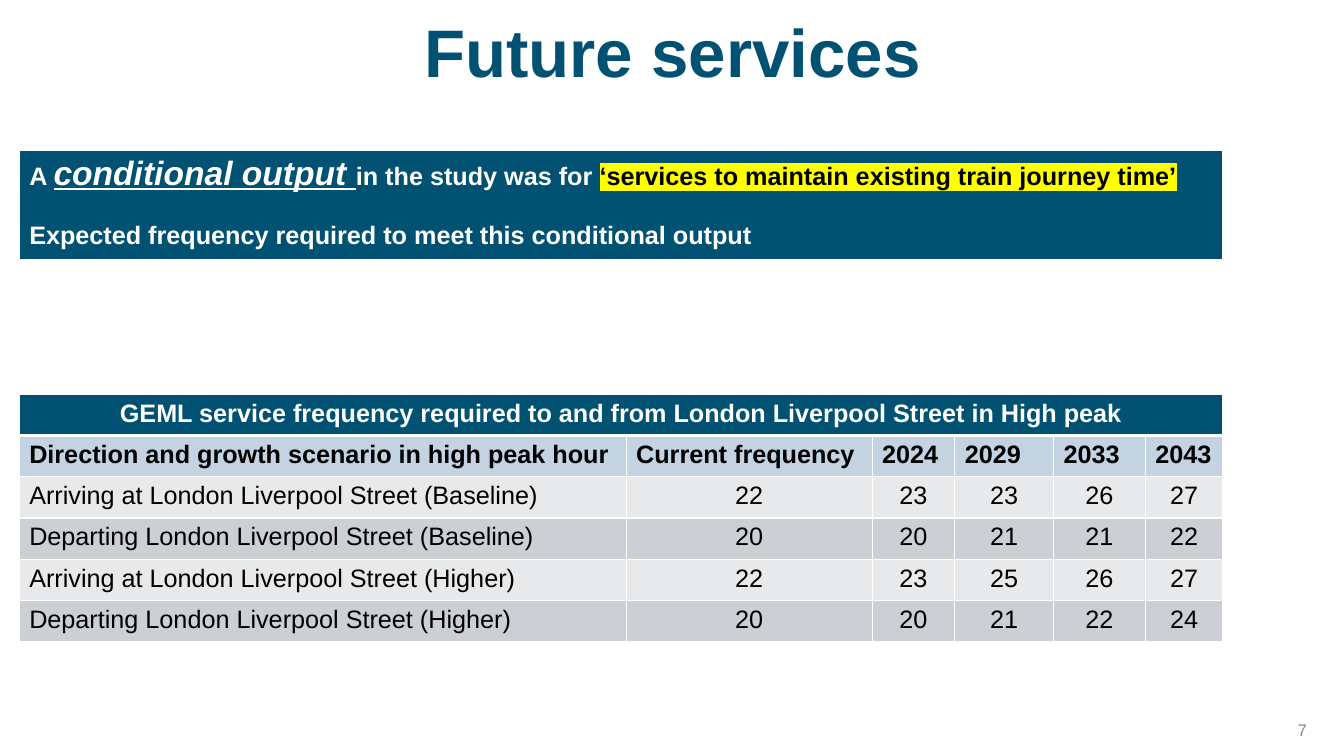
import pptx
import pptx.dml.color
import pptx.enum.text
import pptx.oxml
import pptx.oxml.ns
import pptx.util

Inches = pptx.util.Inches
Align = pptx.enum.text.PP_ALIGN
Anchor = pptx.enum.text.MSO_ANCHOR

TEAL, WHITE, BLACK, YELLOW = "005172", "FFFFFF", "000000", "FFFF00"
HEADING_FILL, BANDS = "C3D3E1", ("E7E9EB", "CCD0D5")

TITLE = "Future services"
OUTPUT_SPANS = [
    ("A ", 18, False, WHITE, None),
    ("conditional output ", 24, True, WHITE, None),
    ("in the study was for ", 18, False, WHITE, None),
    ("‘services to maintain existing train journey time’", 18, False, BLACK, YELLOW),
]
EXPECTED = "Expected frequency required to meet this conditional output"
CAPTION = "GEML service frequency required to and from London Liverpool Street in High peak"
HEADINGS = ("Direction and growth scenario in high peak hour", "Current frequency",
            "2024", "2029", "2033", "2043")
SERVICES = [
    ("Arriving at London Liverpool Street (Baseline)", 22, 23, 23, 26, 27),
    ("Departing London Liverpool Street (Baseline)", 20, 20, 21, 21, 22),
    ("Arriving at London Liverpool Street (Higher)", 22, 23, 25, 26, 27),
    ("Departing London Liverpool Street (Higher)", 20, 20, 21, 22, 24),
]
COLUMN_WIDTHS = (6.02, 2.44, 0.82, 0.98, 0.91, 0.77)
ROW_HEIGHT = 0.41
TABLE_LEFT = 0.19
TABLE_WIDTH = sum(COLUMN_WIDTHS)


def colour(value):
    return pptx.dml.color.RGBColor.from_string(value)


def set_font(font, size, value, bold=False):
    font.name = "Arial"
    font.size = pptx.util.Pt(size)
    font.bold = bold
    font.color.rgb = colour(value)


def highlight(span, value):
    element = pptx.oxml.parse_xml(
        f'<a:highlight {pptx.oxml.ns.nsdecls("a")}><a:srgbClr val="{value}"/></a:highlight>')
    span.font.fill._xPr.find(pptx.oxml.ns.qn("a:solidFill")).addnext(element)


def style_cell(cell, fill, bottom=1):
    properties = cell._tc.get_or_add_tcPr()
    for side, points in (("L", 1), ("R", 1), ("T", 1), ("B", bottom)):
        properties.append(pptx.oxml.parse_xml(
            f'<a:ln{side} {pptx.oxml.ns.nsdecls("a")} w="{points * 12700}">'
            f'<a:solidFill><a:srgbClr val="{WHITE}"/></a:solidFill></a:ln{side}>'))
    cell.fill.solid()
    cell.fill.fore_color.rgb = colour(fill)


def write_cell(cell, text, value, bold, align):
    para = cell.text_frame.paragraphs[0]
    para.text = str(text)
    para.alignment = align
    set_font(para.font, 18, value, bold)


def add_title(page):
    title = page.shapes.title
    title.left, title.top = Inches(2.66), Inches(0.14)
    title.width, title.height = Inches(8.02), Inches(0.83)
    title.text_frame.vertical_anchor = Anchor.MIDDLE
    para = title.text_frame.paragraphs[0]
    para.text = TITLE
    para.alignment = Align.CENTER
    para.line_spacing = 0.9
    set_font(para.font, 48, TEAL, True)


def add_output_table(page):
    table = page.shapes.add_table(1, 1, Inches(TABLE_LEFT), Inches(1.49),
                                  Inches(TABLE_WIDTH), Inches(1.1)).table
    cell = table.cell(0, 0)
    style_cell(cell, TEAL, 3)
    para = cell.text_frame.paragraphs[0]
    for text, size, emphasis, value, marker in OUTPUT_SPANS:
        span = para.add_run()
        span.text = text
        set_font(span.font, size, value, True)
        span.font.italic = span.font.underline = emphasis
        if marker:
            highlight(span, marker)
    para = cell.text_frame.add_paragraph()
    para.text = EXPECTED
    para.space_before = pptx.util.Pt(20.7)
    set_font(para.font, 18, WHITE, True)


def add_service_table(page):
    rows = [HEADINGS] + SERVICES
    table = page.shapes.add_table(
        len(rows) + 1, len(HEADINGS), Inches(TABLE_LEFT), Inches(3.91),
        Inches(TABLE_WIDTH), Inches(ROW_HEIGHT * (len(rows) + 1))).table
    for column, width in zip(table.columns, COLUMN_WIDTHS):
        column.width = Inches(width)
    for index in range(len(HEADINGS)):
        style_cell(table.cell(0, index), TEAL, 3)
    table.cell(0, 0).merge(table.cell(0, len(HEADINGS) - 1))
    write_cell(table.cell(0, 0), CAPTION, WHITE, True, Align.CENTER)
    for number, row in enumerate(rows):
        heading = number == 0
        fill = HEADING_FILL if heading else BANDS[(number - 1) % 2]
        for index, text in enumerate(row):
            cell = table.cell(number + 1, index)
            style_cell(cell, fill)
            align = Align.LEFT if heading or index == 0 else Align.CENTER
            write_cell(cell, text, BLACK, heading, align)


def add_page_number(page):
    box = page.shapes.add_textbox(Inches(12.13), Inches(7.14), Inches(0.93), Inches(0.2))
    box.text_frame.word_wrap = True
    box.text_frame.vertical_anchor = Anchor.MIDDLE
    para = box.text_frame.paragraphs[0]
    para.text = "7"
    para.alignment = Align.RIGHT
    set_font(para.font, 12, "898989")


def main():
    deck = pptx.Presentation()
    deck.slide_width, deck.slide_height = Inches(13.33), Inches(7.5)
    page = deck.slides.add_slide(deck.slide_layouts[5])
    add_title(page)
    add_service_table(page)
    add_output_table(page)
    add_page_number(page)
    deck.save("out.pptx")


if __name__ == "__main__":
    main()
